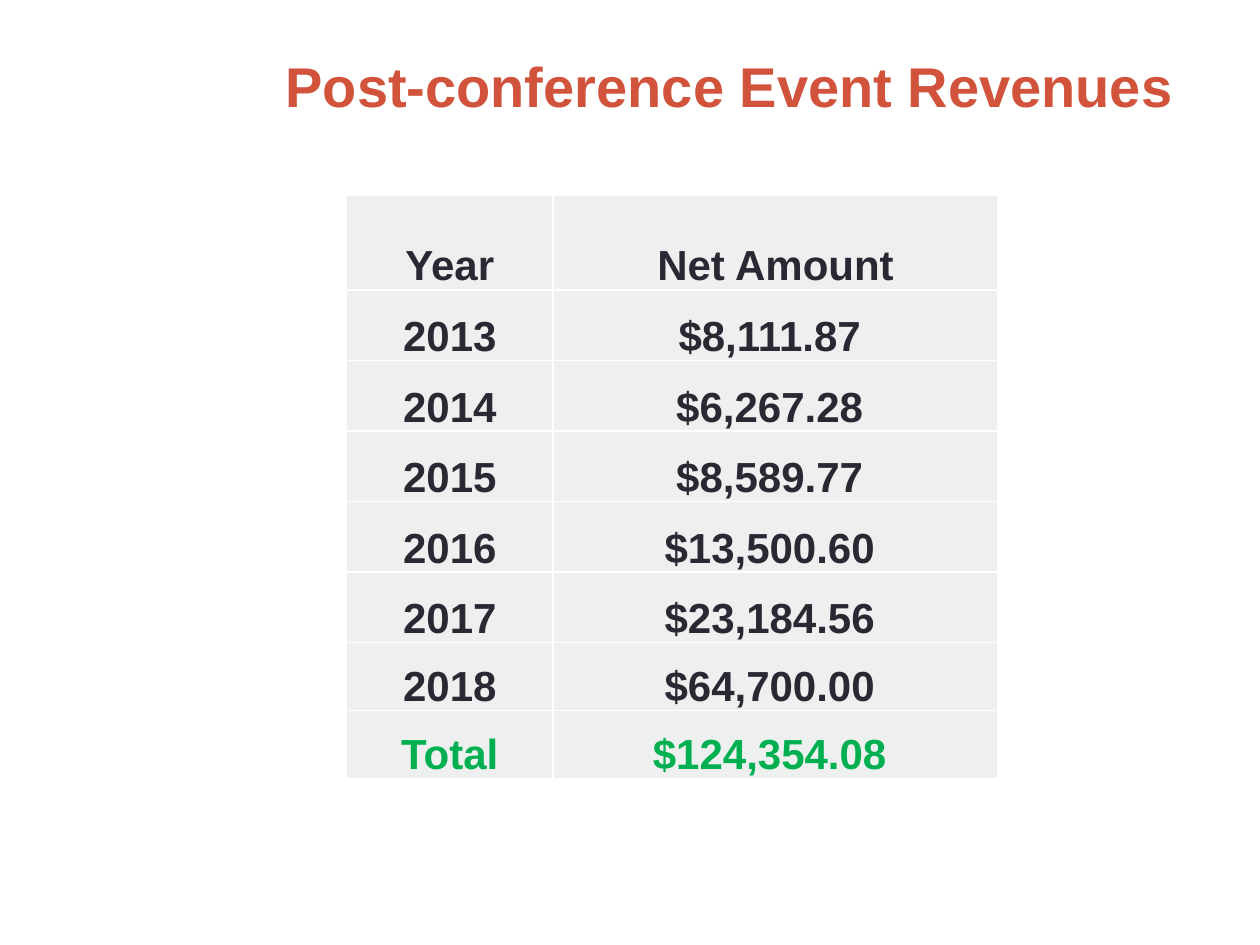
from lxml import etree
from pptx import Presentation
from pptx.dml.color import RGBColor
from pptx.enum.text import MSO_ANCHOR, PP_ALIGN
from pptx.oxml.ns import qn
from pptx.util import Inches, Pt

CENTER = PP_ALIGN.CENTER
TOP, BOTTOM = MSO_ANCHOR.TOP, MSO_ANCHOR.BOTTOM
RED, INK, GREEN, PALE, WHITE = "D2533C", "292934", "00B050", "EEF0EF", "FFFFFF"

ROWS = [
    ("Year", "Net Amount"),
    ("2013", "$8,111.87 "),
    ("2014", "$6,267.28 "),
    ("2015", "$8,589.77 "),
    ("2016", "$13,500.60 "),
    ("2017", "$23,184.56 "),
    ("2018", "$64,700.00 "),
    ("Total", "$124,354.08 "),
]
WIDTHS = [1.64, 3.53]
HEIGHTS = [0.75] + [0.56] * 5 + [0.54] * 2


def color(code):
    return RGBColor.from_string(code)


def style(frame, size, code):
    para = frame.paragraphs[0]
    para.alignment = CENTER
    font = para.runs[0].font
    font.name, font.size, font.bold = "Arial", Pt(size), True
    font.color.rgb = color(code)


def border(cell):
    """Draw a thin white line on all four sides of a cell."""
    props = cell._tc.get_or_add_tcPr()
    for i, side in enumerate(("a:lnL", "a:lnR", "a:lnT", "a:lnB")):
        line = etree.Element(qn(side), w=str(Pt(1)))
        fill = etree.SubElement(line, qn("a:solidFill"))
        etree.SubElement(fill, qn("a:srgbClr"), val=WHITE)
        props.insert(i, line)


def add_title(slide, left, top, width, height):
    title = slide.shapes.title
    title.left, title.top = Inches(left), Inches(top)
    title.width, title.height = Inches(width), Inches(height)
    frame = title.text_frame
    frame.text = "Post-conference Event Revenues"
    frame.vertical_anchor = TOP
    frame.margin_top = Inches(0.11)
    style(frame, 32, RED)


def fill_cell(cell, text, code):
    cell.text_frame.text = text
    style(cell.text_frame, 24, code)
    cell.vertical_anchor = BOTTOM
    cell.margin_left = cell.margin_right = cell.margin_top = Inches(0.01)
    cell.margin_bottom = 0
    cell.fill.solid()
    cell.fill.fore_color.rgb = color(PALE)
    border(cell)


def add_sums(slide, left, top):
    """Add the table of net amounts by year."""
    table = slide.shapes.add_table(
        len(ROWS), len(WIDTHS), Inches(left), Inches(top),
        Inches(sum(WIDTHS)), Inches(sum(HEIGHTS))).table
    for col, width in zip(table.columns, WIDTHS):
        col.width = Inches(width)
    for r, (texts, height) in enumerate(zip(ROWS, HEIGHTS)):
        table.rows[r].height = Inches(height)
        code = GREEN if texts[0] == "Total" else INK
        for c, text in enumerate(texts):
            fill_cell(table.cell(r, c), text, code)


def main():
    deck = Presentation()
    deck.slide_width, deck.slide_height = Inches(10), Inches(7.5)
    slide = deck.slides.add_slide(deck.slide_layouts[5])
    add_title(slide, 2.08, 0.3, 7.42, 1.25)
    add_sums(slide, 2.75, 1.55)
    deck.save("out.pptx")


if __name__ == "__main__":
    main()
